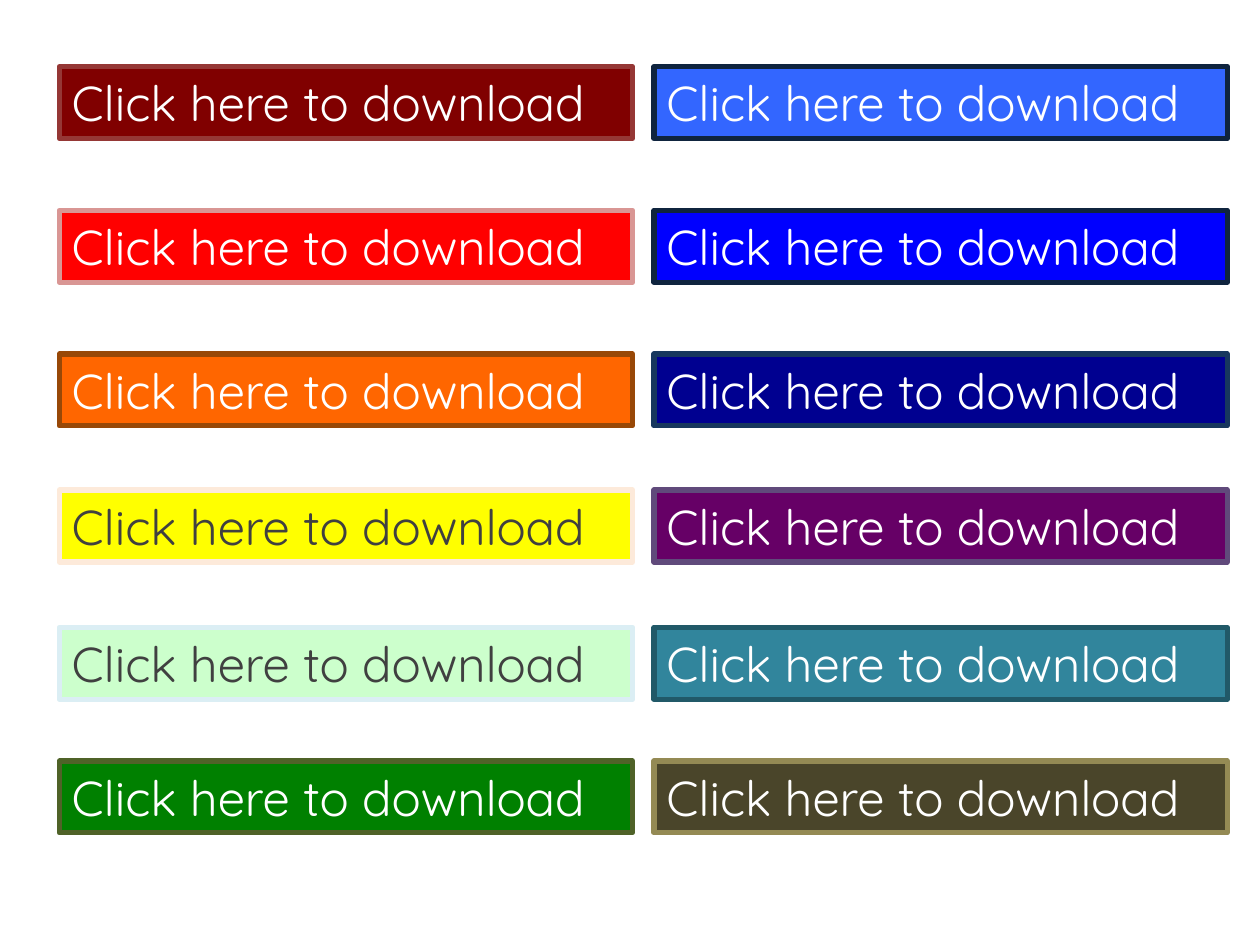
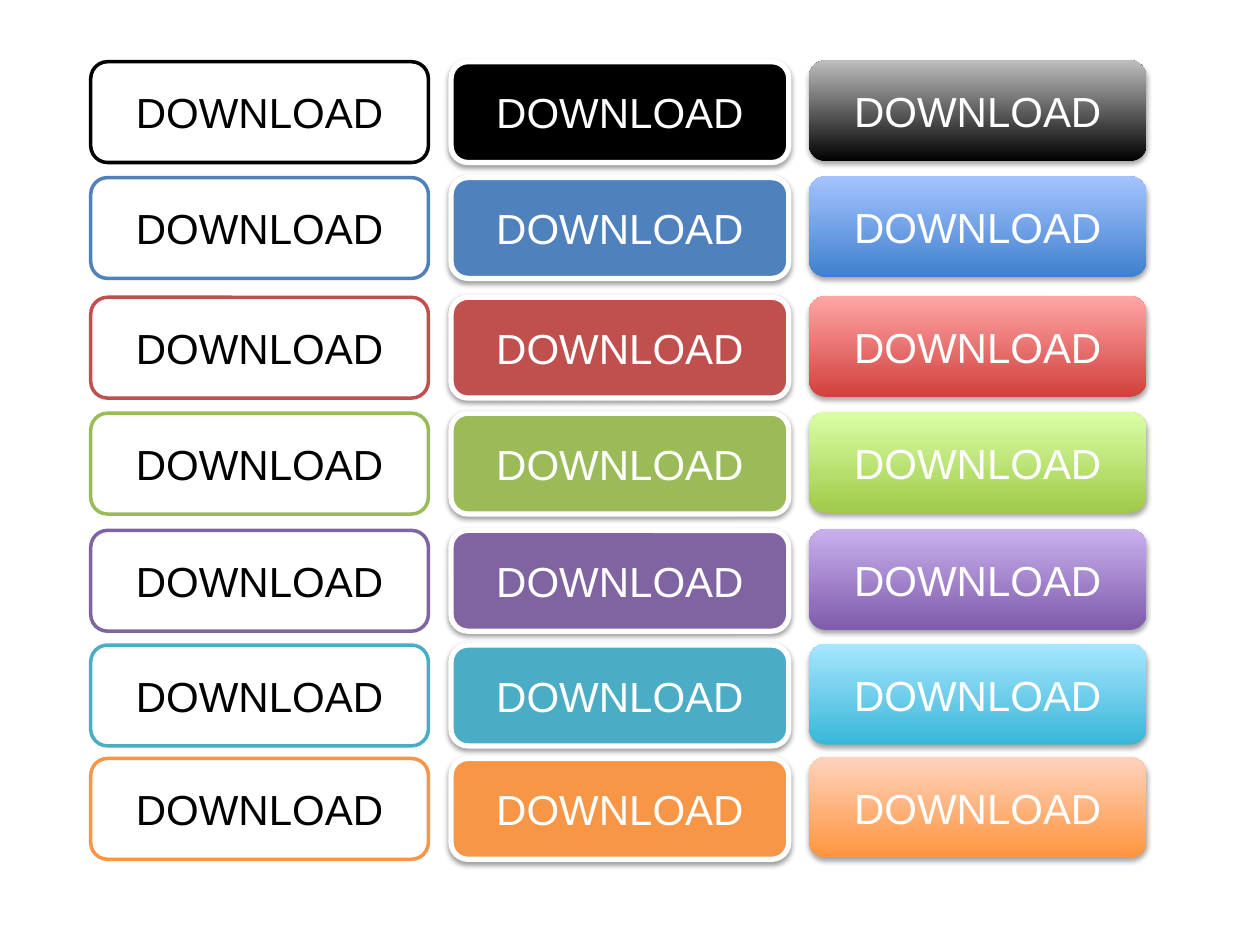
from lxml.etree import SubElement
from pptx import Presentation
from pptx.dml.color import RGBColor
from pptx.enum.shapes import MSO_SHAPE as Shape
from pptx.enum.text import MSO_ANCHOR as Anchor, PP_ALIGN as Align
from pptx.oxml.ns import qn
from pptx.util import Inches, Pt

COLORS = {
    "white": "FFFFFF", "black": "000000", "charcoal": "404040",
    "maroon": "800000", "maroon edge": "953735",
    "red": "FF0000", "red edge": "D99694",
    "orange": "FF6600", "orange edge": "984807",
    "yellow": "FFFF00", "yellow edge": "FDEADA",
    "mint": "CCFFCC", "mint edge": "DBEEF4",
    "green": "008000", "green edge": "4F6228",
    "sky": "3366FF", "sky edge": "0F243E",
    "blue": "0000FF", "blue edge": "0F243E",
    "navy": "000090", "navy edge": "17375E",
    "purple": "660066", "purple edge": "604A7B",
    "teal": "31859C", "teal edge": "215968",
    "olive": "4A452A", "olive edge": "948A54",
    "soft blue": "4F81BD", "blue base": "3F80CE", "blue glow": "A4C4FF",
    "soft red": "C0504D", "red base": "D1403C", "red glow": "FFA6A5",
    "soft green": "9BBB59", "green base": "A0CA4A", "green glow": "DAFFA5",
    "soft purple": "8064A2", "purple base": "7F5BAB", "purple glow": "C8B0ED",
    "soft aqua": "4BACC6", "aqua base": "39B7D8", "aqua glow": "A7E6FF",
    "soft orange": "F79646", "orange base": "FF953E", "orange glow": "FFD2BD",
    "black base": "000000", "black glow": "BDBDBD",
}

BANNER_COLUMNS = {
    0.47: ["maroon", "red", "orange", "yellow", "mint", "green"],
    5.19: ["sky", "blue", "navy", "purple", "teal", "olive"],
}
BANNER_TOPS = [0.53, 1.67, 2.81, 3.89, 4.98, 6.04]
DARK_TEXT_BANNERS = {"yellow", "mint"}

BUTTON_HUES = ["black", "blue", "red", "green", "purple", "aqua", "orange"]
BUTTON_TOPS = [0.49, 1.41, 2.36, 3.28, 4.21, 5.12, 6.02]
BUTTON_SIZE = (2.68, 0.8)


def rgb(name):
    return RGBColor.from_string(COLORS[name])


def write_text(shape, text, font, size, color, align=Align.LEFT, anchor=Anchor.TOP):
    frame = shape.text_frame
    frame.word_wrap = True
    frame.vertical_anchor = anchor
    para = frame.paragraphs[0]
    para.alignment = align
    span = para.add_run()
    span.text = text
    span.font.name = font
    span.font.size = Pt(size)
    span.font.color.rgb = rgb(color)


def paint(shape, fill, line=None, width=0):
    if isinstance(fill, tuple):
        shape.fill.gradient()
        shape.fill.gradient_angle = 90
        for stop, name in zip(shape.fill.gradient_stops, fill):
            stop.color.rgb = rgb(name)
    else:
        shape.fill.solid()
        shape.fill.fore_color.rgb = rgb(fill)
    if line:
        shape.line.color.rgb = rgb(line)
        shape.line.width = Pt(width)
    else:
        shape.line.fill.background()


def drop_shadow(shape, opacity, distance):
    effects = shape._element.spPr.find(qn("a:effectLst"))
    shadow = SubElement(effects, qn("a:outerShdw"), blurRad=str(Pt(3.1)),
                        dist=str(Pt(distance)), dir="5400000", rotWithShape="0")
    color = SubElement(shadow, qn("a:srgbClr"), val=COLORS["black"])
    SubElement(color, qn("a:alpha"), val=str(opacity * 1000))


def add_banner(page, left, top, hue):
    banner = page.shapes.add_textbox(*map(Inches, (left, top, 4.55, 0.57)))
    paint(banner, hue, f"{hue} edge", 3)
    write_text(banner, "Click here to download", font="Quicksand", size=28,
               color="charcoal" if hue in DARK_TEXT_BANNERS else "white")


def add_button(page, left, top, fill, line=None, width=0, text_color="white", shadow=None):
    button = page.shapes.add_shape(Shape.ROUNDED_RECTANGLE,
                                   *map(Inches, (left, top, *BUTTON_SIZE)))
    button.shadow.inherit = False
    paint(button, fill, line, width)
    if shadow:
        drop_shadow(button, *shadow)
    write_text(button, "DOWNLOAD", font="Arial", size=24, color=text_color,
               align=Align.CENTER, anchor=Anchor.MIDDLE)


def build_banner_page(page):
    for left, hues in BANNER_COLUMNS.items():
        for top, hue in zip(BANNER_TOPS, hues):
            add_banner(page, left, top, hue)


def build_button_page(page):
    for top, hue in zip(BUTTON_TOPS, BUTTON_HUES):
        flat = hue if hue == "black" else f"soft {hue}"
        add_button(page, 0.72, top, "white", line=flat, width=2, text_color="black")
        add_button(page, 3.58, top, flat, line="white", width=3, shadow=(38, 1.6))
        add_button(page, 6.42, top - 0.01, (f"{hue} base", f"{hue} glow"), shadow=(35, 1.8))


def main():
    deck = Presentation()
    deck.slide_width, deck.slide_height = Inches(10), Inches(7.5)
    for build in (build_banner_page, build_button_page):
        build(deck.slides.add_slide(deck.slide_layouts[6]))
    deck.save("out.pptx")


if __name__ == "__main__":
    main()
